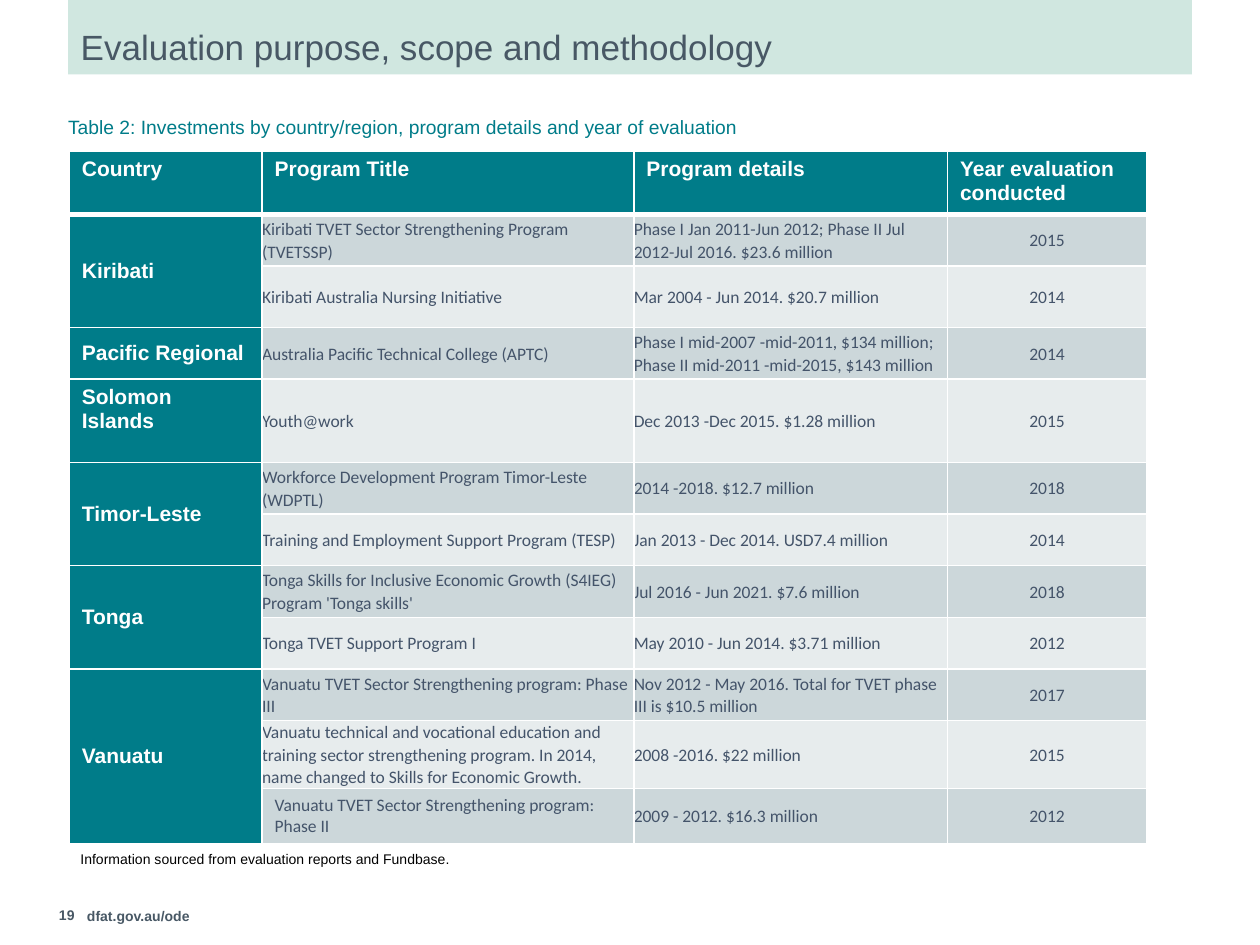
from lxml.etree import fromstring
from pptx import Presentation
from pptx.dml.color import RGBColor
from pptx.enum.text import MSO_ANCHOR, MSO_AUTO_SIZE, PP_ALIGN
from pptx.util import Inches, Pt

TEAL = RGBColor(0x00, 0x7C, 0x89)
MINT = RGBColor(0xD0, 0xE7, 0xE0)
SLATE = RGBColor(0x48, 0x58, 0x65)
BLUE_GREY = RGBColor(0x44, 0x54, 0x6A)
BAND_DARK = RGBColor(0xCC, 0xD7, 0xDA)
BAND_LIGHT = RGBColor(0xE7, 0xEC, 0xED)
WHITE = RGBColor(0xFF, 0xFF, 0xFF)
BLACK = RGBColor(0x00, 0x00, 0x00)

DRAWING_NS = "http://schemas.openxmlformats.org/drawingml/2006/main"


def write(frame, text, size=12, font="Arial", color=WHITE, bold=False,
          align=PP_ALIGN.LEFT, spacing=None, before=None):
    paragraph = frame.paragraphs[0]
    paragraph.alignment = align
    paragraph.line_spacing = spacing
    if before is not None:
        paragraph.space_before = Pt(before)
    run = paragraph.add_run()
    run.text = text
    run.font.size = Pt(size)
    run.font.name = font
    run.font.bold = bold
    run.font.color.rgb = color


def paint_cell(cell, color, bottom=1):
    cell.fill.solid()
    cell.fill.fore_color.rgb = color
    properties = cell._tc.get_or_add_tcPr()
    for index, (side, width) in enumerate(zip("LRTB", (1, 1, 1, bottom))):
        properties.insert(index, fromstring(
            f'<a:ln{side} xmlns:a="{DRAWING_NS}" w="{Pt(width)}"><a:solidFill>'
            f'<a:srgbClr val="{WHITE}"/></a:solidFill></a:ln{side}>'))


presentation = Presentation()
presentation.slide_width = Inches(10)
presentation.slide_height = Inches(7.5)
slide = presentation.slides.add_slide(presentation.slide_layouts[5])

title = slide.shapes.title
title.left, title.top = Inches(0.54), Inches(0)
title.width, title.height = Inches(8.92), Inches(0.59)
title.fill.solid()
title.fill.fore_color.rgb = MINT
heading = title.text_frame
heading.auto_size = MSO_AUTO_SIZE.NONE
heading.vertical_anchor = MSO_ANCHOR.TOP
heading.margin_left = heading.margin_right = Inches(0.1)
heading.margin_top = heading.margin_bottom = Inches(0.24)
write(heading, "Evaluation purpose, scope and methodology", size=20, color=SLATE, spacing=0.9)

footer = dict(size=8, color=SLATE, bold=True)
labels = [
    ((0.54, 0.9, 8.62, 0.3), (0, 0), MSO_ANCHOR.TOP,
     "Table 2: Investments by country/region, program details and year of evaluation",
     dict(size=11, color=TEAL, spacing=1.1, before=10)),
    ((0.54, 6.7, 8.56, 0.24), (0.1, 0.05), MSO_ANCHOR.TOP,
     "Information sourced from evaluation reports and Fundbase.", dict(size=8, color=BLACK)),
    ((0, 7.03, 0.69, 0.47), (0.1, 0.05), MSO_ANCHOR.MIDDLE,
     "19", dict(footer, align=PP_ALIGN.RIGHT)),
    ((0.69, 7.15, 1.55, 0.24), (0, 0.05), MSO_ANCHOR.MIDDLE, "dfat.gov.au/ode", footer),
]
for box, (side_margin, end_margin), anchor, text, style in labels:
    label = slide.shapes.add_textbox(*map(Inches, box)).text_frame
    label.word_wrap = True
    label.vertical_anchor = anchor
    label.margin_left = label.margin_right = Inches(side_margin)
    label.margin_top = label.margin_bottom = Inches(end_margin)
    write(label, text, **style)

headers = ["Country", "Program Title", "Program details", "Year evaluation conducted"]
countries = {
    "Kiribati": [
        ("Kiribati TVET Sector Strengthening Program (TVETSSP)",
         "Phase I Jan 2011-Jun 2012; Phase II Jul 2012-Jul 2016. $23.6 million", "2015"),
        ("Kiribati Australia Nursing Initiative", "Mar 2004 - Jun 2014. $20.7 million", "2014"),
    ],
    "Pacific Regional": [
        ("Australia Pacific Technical College (APTC)",
         "Phase I mid-2007 -mid-2011, $134 million; Phase II mid-2011 -mid-2015, $143 million",
         "2014"),
    ],
    "Solomon Islands": [("Youth@work", "Dec 2013 -Dec 2015. $1.28 million", "2015")],
    "Timor-Leste": [
        ("Workforce Development Program Timor-Leste (WDPTL)", "2014 -2018. $12.7 million", "2018"),
        ("Training and Employment Support Program (TESP)",
         "Jan 2013 - Dec 2014. USD7.4 million", "2014"),
    ],
    "Tonga": [
        ("Tonga Skills for Inclusive Economic Growth (S4IEG) Program 'Tonga skills'",
         "Jul 2016 - Jun 2021. $7.6 million", "2018"),
        ("Tonga TVET Support Program I", "May 2010 - Jun 2014. $3.71 million", "2012"),
    ],
    "Vanuatu": [
        ("Vanuatu TVET Sector Strengthening program: Phase III",
         "Nov 2012 - May 2016. Total for TVET phase III is $10.5 million", "2017"),
        ("Vanuatu technical and vocational education and training sector strengthening program. "
         "In 2014, name changed to Skills for Economic Growth.", "2008 -2016. $22 million", "2015"),
        ("Vanuatu TVET Sector Strengthening program: Phase II",
         "2009 - 2012. $16.3 million", "2012"),
    ],
}
column_widths = [1.53, 2.95, 2.49, 1.58]
row_heights = [0.47, 0.41, 0.49, 0.41, 0.66, 0.41, 0.41, 0.41, 0.41, 0.41, 0.54, 0.43]

investments = slide.shapes.add_table(
    len(row_heights), len(headers), Inches(0.55), Inches(1.2),
    Inches(sum(column_widths)), Inches(sum(row_heights))).table
for column, width in zip(investments.columns, column_widths):
    column.width = Inches(width)
for row, height in zip(investments.rows, row_heights):
    row.height = Inches(height)

for column_index, header in enumerate(headers):
    cell = investments.cell(0, column_index)
    paint_cell(cell, TEAL, bottom=3)
    write(cell.text_frame, header, bold=True)

row_index = 1
for country, programs in countries.items():
    country_cell = investments.cell(row_index, 0)
    if len(programs) > 1:
        country_cell.merge(investments.cell(row_index + len(programs) - 1, 0))
    country_cell.vertical_anchor = (
        MSO_ANCHOR.TOP if country == "Solomon Islands" else MSO_ANCHOR.MIDDLE)
    write(country_cell.text_frame, country, bold=True)
    for program in programs:
        paint_cell(investments.cell(row_index, 0), TEAL)
        for column_index, text in enumerate(program, start=1):
            cell = investments.cell(row_index, column_index)
            paint_cell(cell, BAND_DARK if row_index % 2 else BAND_LIGHT)
            style = dict(size=10, font="Calibri", color=BLUE_GREY)
            if (row_index, column_index) != (len(row_heights) - 1, 1):
                cell.vertical_anchor = MSO_ANCHOR.MIDDLE
                cell.margin_left = cell.margin_right = Inches(0)
                cell.margin_top = cell.margin_bottom = Inches(0)
                style.update(spacing=1.07, before=3)
            if column_index == 3:
                style.update(align=PP_ALIGN.CENTER)
            write(cell.text_frame, text, **style)
        row_index += 1

presentation.save("out.pptx")
